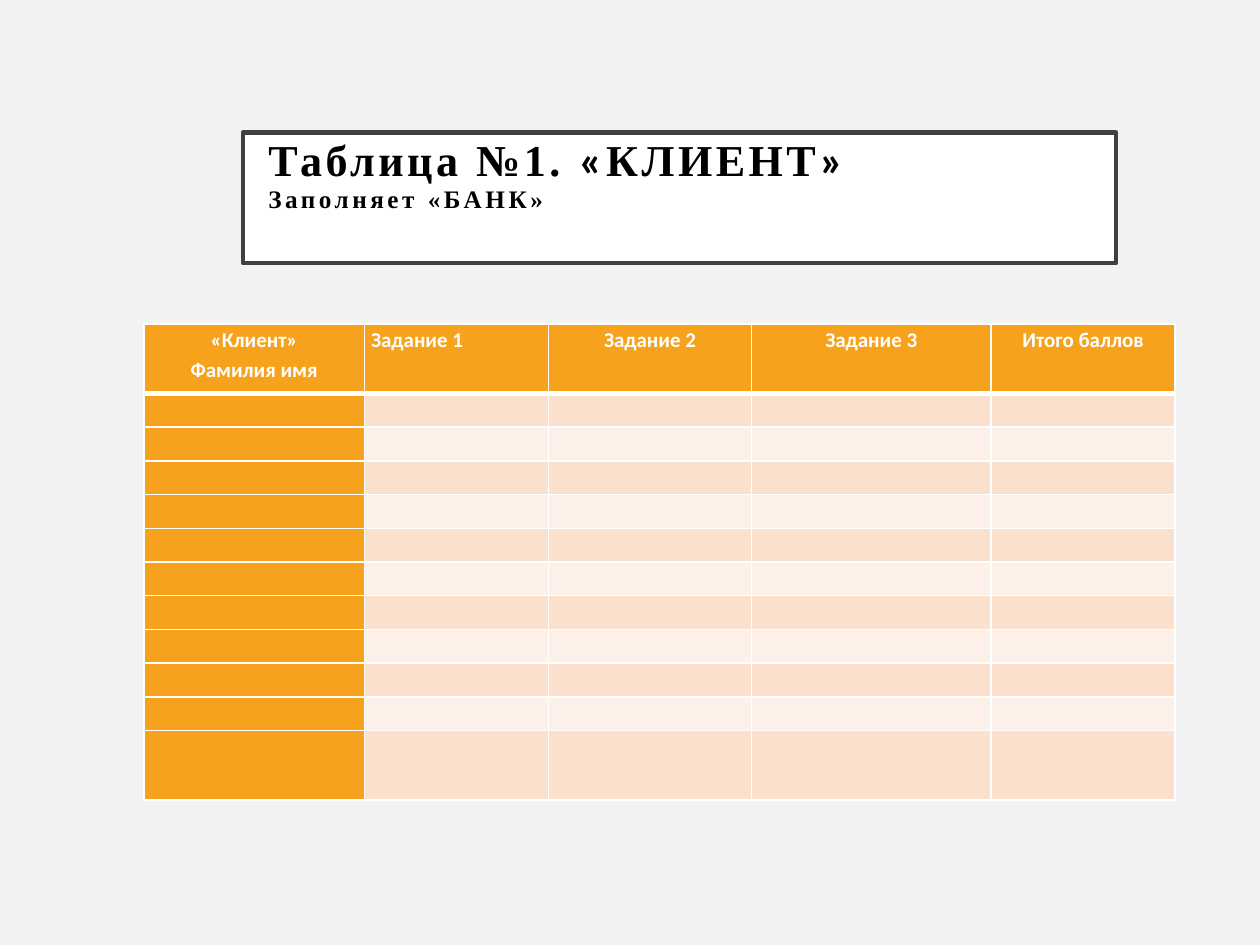
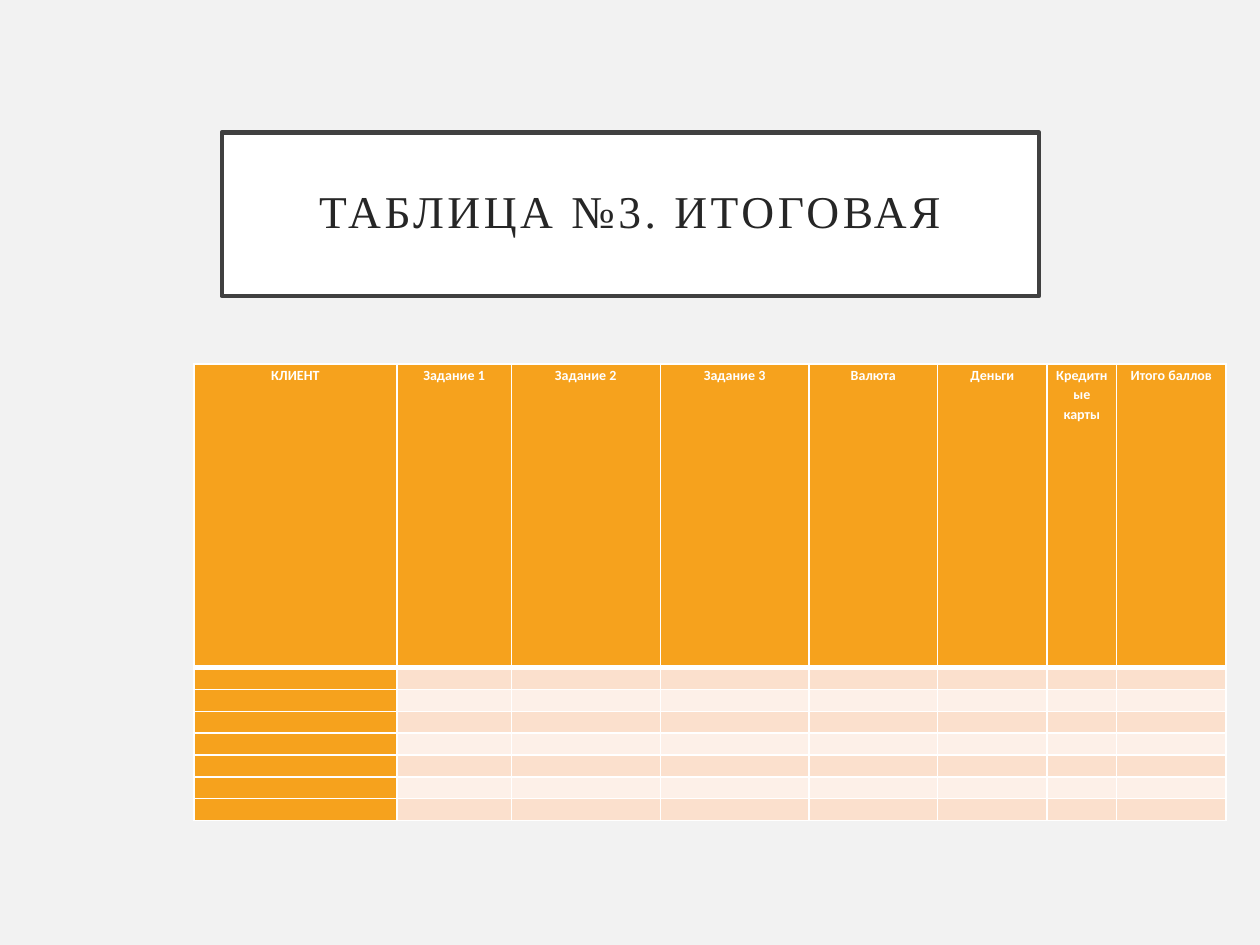
from dataclasses import dataclass

from lxml import etree
from pptx import Presentation, util as u
from pptx.dml.color import RGBColor
from pptx.enum import shapes, text
from pptx.oxml import ns

COLORS = {
    "background": "F2F2F2",
    "white": "FFFFFF",
    "frame": "404040",
    "black": "000000",
    "title": "262626",
    "accent": "F6A21D",
    "band_dark": "FBE0CD",
    "band_light": "FDF0E8",
}
SERIF, SANS = "Times New Roman", "Calibri"
CENTER, LEFT = text.PP_ALIGN.CENTER, text.PP_ALIGN.LEFT
TOP, MIDDLE = text.MSO_ANCHOR.TOP, text.MSO_ANCHOR.MIDDLE


@dataclass(frozen=True)
class TitlePart:
    wording: str
    size: float
    font: str = SERIF


@dataclass(frozen=True)
class TitleBox:
    left: float
    width: float
    height: float
    lines: tuple[tuple[TitlePart, ...], ...]
    color: str = "title"
    bold: bool = False
    align: text.PP_ALIGN = CENTER
    anchor: text.MSO_ANCHOR = MIDDLE
    top_inset: float = 0.51


@dataclass(frozen=True)
class ScoreTable:
    left: float
    top: float
    headings: tuple[str, ...]
    widths: tuple[float, ...]
    heights: tuple[float, ...]
    size: float
    left_aligned: tuple[str, ...] = ()


def rgb(name: str) -> RGBColor:
    return RGBColor.from_string(COLORS[name])


def draw_title(slide, title: TitleBox) -> None:
    frame = slide.shapes.add_shape(
        shapes.MSO_SHAPE.RECTANGLE, u.Cm(title.left), u.Cm(2.67),
        u.Cm(title.width), u.Cm(title.height))
    frame.shadow.inherit = False
    frame.fill.solid()
    frame.fill.fore_color.rgb = rgb("white")
    frame.line.color.rgb = rgb("frame")
    frame.line.width = u.Pt(2.5)

    body = frame.text_frame
    body.word_wrap = True
    body.vertical_anchor = title.anchor
    body.margin_left = body.margin_right = body.margin_bottom = u.Cm(0.51)
    body.margin_top = u.Cm(title.top_inset)

    heading = body.paragraphs[0]
    heading.alignment = title.align
    heading.line_spacing = 0.9
    for number, line in enumerate(title.lines):
        if number:
            heading.add_line_break()
        for part in line:
            run = heading.add_run()
            run.text = part.wording
            run.font.size = u.Pt(part.size)
            run.font.name = part.font
            run.font.bold = title.bold
            run.font.color.rgb = rgb(title.color)
            run.font._element.set("spc", "200")


def add_borders(cell, top: float, bottom: float) -> None:
    properties = cell._tc.get_or_add_tcPr()
    for side, points in (("L", 1), ("R", 1), ("T", top), ("B", bottom)):
        border = etree.SubElement(
            properties, ns.qn(f"a:ln{side}"), w=str(u.Pt(points)))
        fill = etree.SubElement(border, ns.qn("a:solidFill"))
        etree.SubElement(fill, ns.qn("a:srgbClr"), val=COLORS["white"])


def cell_color(row: int, column: int) -> str:
    if row == 0 or column == 0:
        return "accent"
    return "band_dark" if row % 2 else "band_light"


def format_cell(cell, row: int, column: int, size: float) -> None:
    add_borders(cell, 3 if row == 1 else 1, 3 if row == 0 else 1)
    cell.fill.solid()
    cell.fill.fore_color.rgb = rgb(cell_color(row, column))
    cell.margin_left = cell.margin_right = u.Cm(0.13)
    cell.margin_top = cell.margin_bottom = 0
    if row:
        # Keep empty rows as low as their text size allows
        etree.SubElement(cell.text_frame.paragraphs[0]._p,
                         ns.qn("a:endParaRPr"), sz=str(int(size * 100)))


def draw_table(slide, scores: ScoreTable) -> None:
    table = slide.shapes.add_table(
        len(scores.heights), len(scores.widths), u.Cm(scores.left),
        u.Cm(scores.top), u.Cm(sum(scores.widths)),
        u.Cm(sum(scores.heights))).table
    for column, width in zip(table.columns, scores.widths):
        column.width = u.Cm(width)
    for row, height in zip(table.rows, scores.heights):
        row.height = u.Cm(height)

    for row in range(len(scores.heights)):
        for column in range(len(scores.widths)):
            format_cell(table.cell(row, column), row, column, scores.size)

    # Heading row
    for column, heading in enumerate(scores.headings):
        body = table.cell(0, column).text_frame
        body.text = heading
        for paragraph in body.paragraphs:
            paragraph.alignment = LEFT if heading in scores.left_aligned else CENTER
            paragraph.line_spacing = 1.15
            for run in paragraph.runs:
                run.font.size = u.Pt(scores.size)
                run.font.name = SANS
                run.font.bold = True
                run.font.color.rgb = rgb("white")


TASKS = ("Задание 1", "Задание 2", "Задание 3")
TOTAL = "Итого баллов"

SLIDES = (
    # Client scores, filled in by the bank
    (TitleBox(4.9, 17.6, 2.64,
              ((TitlePart("Таблица №1. ", 25.2), TitlePart("«", 25.2, SANS),
                TitlePart("КЛИЕНТ", 25.2), TitlePart("»", 25.2, SANS)),
               (TitlePart("Заполняет «БАНК»", 14.4),)),
              color="black", bold=True, align=LEFT, anchor=TOP, top_inset=0.13),
     ScoreTable(2.9, 6.53, ("«Клиент»\nФамилия имя", *TASKS, TOTAL),
                (4.45, 3.71, 4.09, 4.83, 3.71),
                (1.4, *[0.68] * 10, 1.4), 12, left_aligned=TASKS[:1])),
    # Final scores
    (TitleBox(4.47, 16.48, 3.3, ((TitlePart("ТАБЛИЦА №3. ИТОГОВАЯ", 26),),)),
     ScoreTable(3.91, 7.34,
                ("КЛИЕНТ", *TASKS, "Валюта", "Деньги", "Кредитные карты", TOTAL),
                (4.09, 2.31, 3, 3, 2.59, 2.21, 1.4, 2.21),
                (6.12, *[0.44] * 7), 8)),
)


def main() -> None:
    deck = Presentation()
    deck.slide_width, deck.slide_height = u.Cm(25.4), u.Cm(19.05)
    for title, scores in SLIDES:
        slide = deck.slides.add_slide(deck.slide_layouts[6])
        slide.background.fill.solid()
        slide.background.fill.fore_color.rgb = rgb("background")
        draw_title(slide, title)
        draw_table(slide, scores)
    deck.save("out.pptx")


if __name__ == "__main__":
    main()
